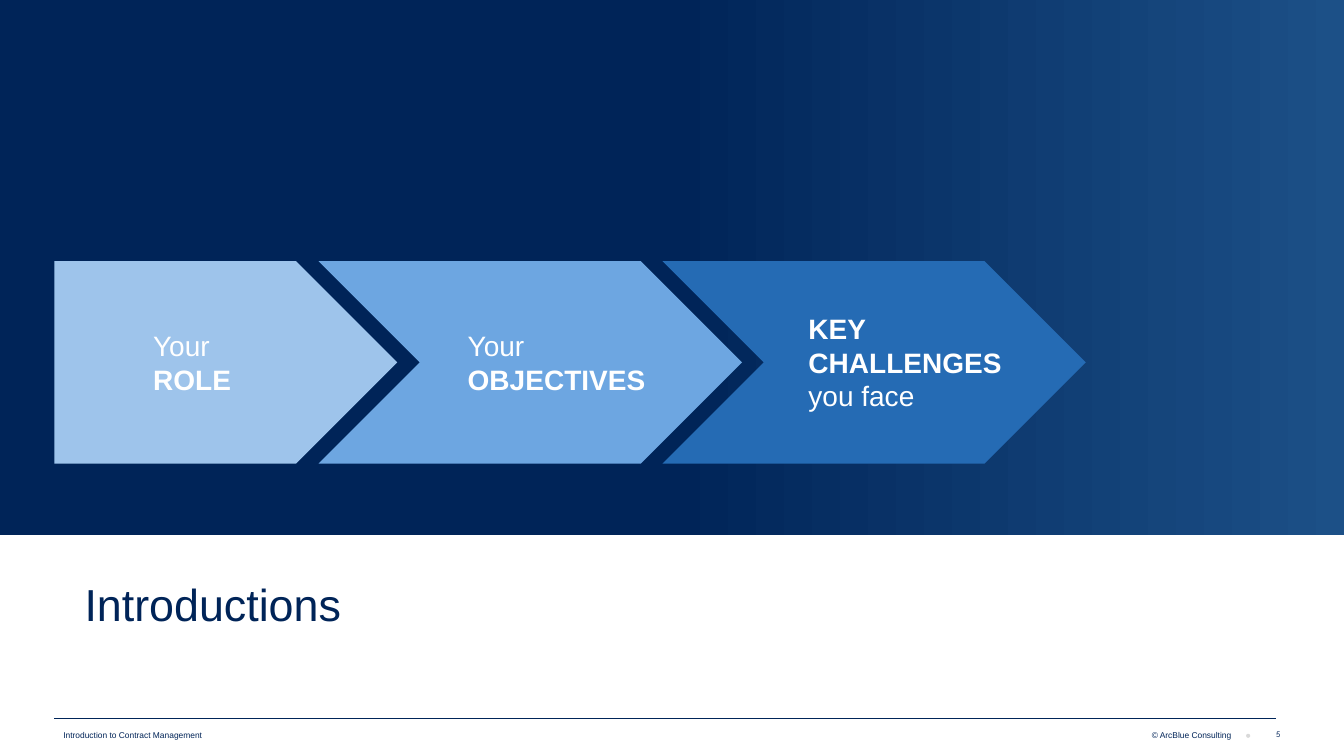
from dataclasses import dataclass

import pptx
import pptx.dml.color
import pptx.enum.shapes
import pptx.enum.text
import pptx.oxml
import pptx.util
from pptx.util import Inches

SHAPE = pptx.enum.shapes.MSO_SHAPE
ALIGN = pptx.enum.text.PP_ALIGN


@dataclass(frozen=True)
class Theme:
    navy: str = "002458"
    band_end: str = "1C5087"
    white: str = "FFFFFF"
    dot: str = "D9D9D9"
    role: str = "9EC4EB"
    objectives: str = "6DA6E1"
    challenges: str = "256BB4"
    font: str = "Arial"
    number_font: str = "League Spartan"
    title_size: int = 32
    step_size: int = 20
    footer_size: int = 6


THEME = Theme()


def rgb(value):
    return pptx.dml.color.RGBColor.from_string(value)


def add_text(slide, text, left, top, width, height, *, size, color=THEME.navy,
             font=THEME.font, align=ALIGN.LEFT, wrap=True, bold_lines=()):
    box = slide.shapes.add_textbox(Inches(left), Inches(top), Inches(width), Inches(height))
    frame = box.text_frame
    frame.word_wrap = wrap
    frame.text = text
    for index, paragraph in enumerate(frame.paragraphs):
        paragraph.alignment = align
        for run in paragraph.runs:
            run.font.name = font
            run.font.size = pptx.util.Pt(size)
            run.font.color.rgb = rgb(color)
            run.font.bold = index in bold_lines


def add_block(slide, preset, left, top, width, height, color, fade_to=None):
    block = slide.shapes.add_shape(
        preset, Inches(left), Inches(top), Inches(width), Inches(height))
    block.shadow.inherit = False
    block.line.fill.background()
    if fade_to is None:
        block.fill.solid()
        block.fill.fore_color.rgb = rgb(color)
        return
    block.fill.gradient()
    block.fill.gradient_angle = 0
    stops = zip(block.fill.gradient_stops, (0.5, 1), (color, fade_to))
    for stop, position, stop_color in stops:
        stop.position = position
        stop.color.rgb = rgb(stop_color)


def add_rule(slide, left, right, y):
    rule = slide.shapes.add_connector(
        pptx.enum.shapes.MSO_CONNECTOR.STRAIGHT,
        Inches(left), Inches(y), Inches(right), Inches(y))
    rule.line.color.rgb = rgb(THEME.navy)
    rule.line.width = pptx.util.Pt(0.5)
    effects = pptx.oxml.parse_xml(
        '<a:effectLst xmlns:a="http://schemas.openxmlformats.org/drawingml/2006/main"/>')
    rule.element.spPr.append(effects)


def add_footer(slide):
    size = THEME.footer_size
    add_rule(slide, 0.54, 12.66, 7.13)
    add_text(slide, "Introduction to Contract Management", 0.53, 7.19, 3.18, 0.2, size=size)
    add_text(slide, "5", 12.3, 7.18, 0.5, 0.24, size=size,
             font=THEME.number_font, align=ALIGN.RIGHT)
    add_text(slide, "© ArcBlue Consulting", 9.13, 7.19, 3.18, 0.2, size=size,
             align=ALIGN.RIGHT)
    add_block(slide, SHAPE.OVAL, 12.36, 7.28, 0.04, 0.04, THEME.dot)


def add_steps(slide):
    steps = [
        (SHAPE.PENTAGON, 0.54, 3.4, THEME.role,
         "Your\nROLE", (1.42, 3.21, 0.98, 0.77), (1,)),
        (SHAPE.CHEVRON, 3.16, 4.2, THEME.objectives,
         "Your\nOBJECTIVES", (4.54, 3.21, 1.98, 0.77), (1,)),
        (SHAPE.CHEVRON, 6.57, 4.2, THEME.challenges,
         "KEY\nCHALLENGES\nyou face", (7.92, 3.04, 2.14, 1.11), (0, 1)),
    ]
    for preset, left, width, color, label, label_box, bold_lines in steps:
        add_block(slide, preset, left, 2.59, width, 2.01, color)
        add_text(slide, label, *label_box, size=THEME.step_size, color=THEME.white,
                 wrap=False, bold_lines=bold_lines)


def main():
    deck = pptx.Presentation()
    deck.slide_width = Inches(13.33)
    deck.slide_height = Inches(7.5)
    slide = deck.slides.add_slide(deck.slide_layouts[6])
    add_footer(slide)
    add_block(slide, SHAPE.RECTANGLE, 0, 0, 13.33, 5.31, THEME.navy, fade_to=THEME.band_end)
    add_text(slide, "Introductions", 0.74, 5.67, 10, 1.53, size=THEME.title_size)
    add_steps(slide)
    deck.save("out.pptx")


if __name__ == "__main__":
    main()
